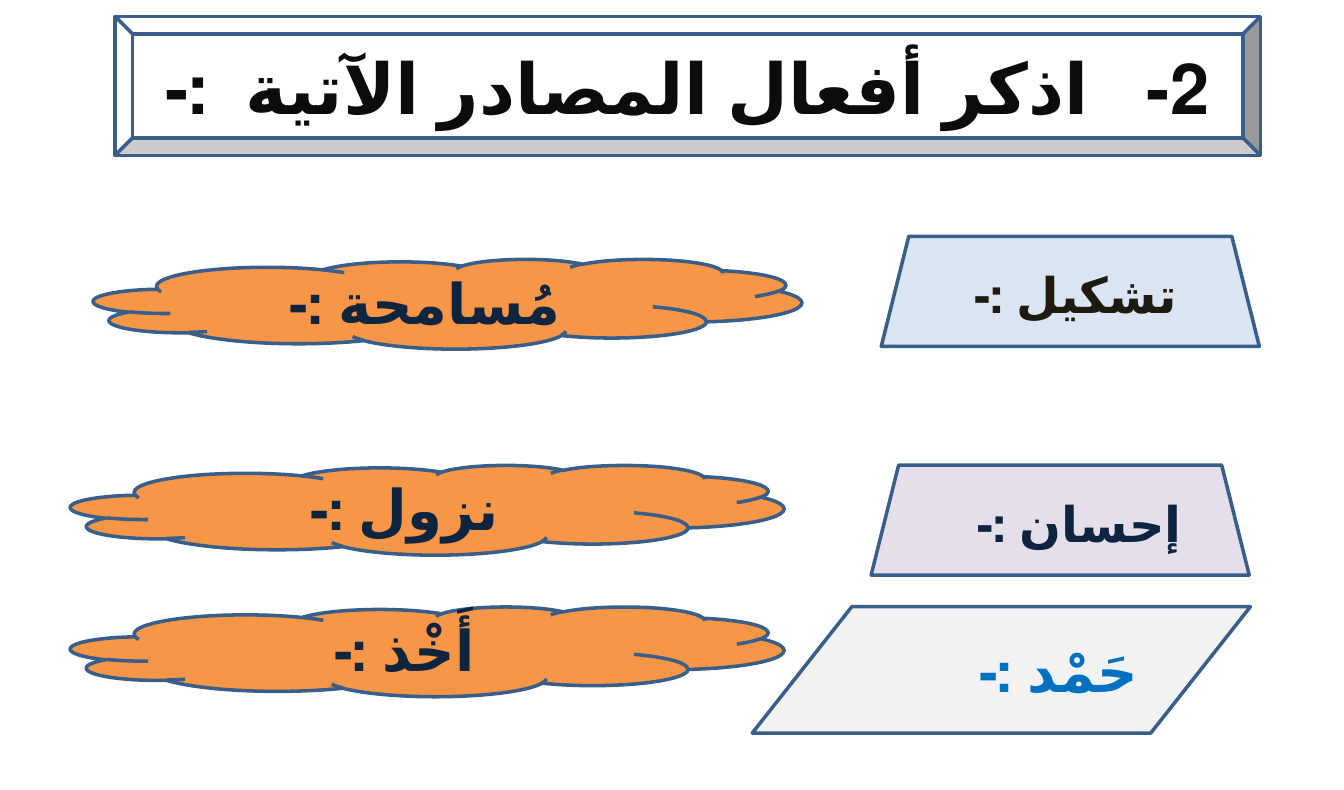
from dataclasses import dataclass

import pptx
import pptx.dml.color
import pptx.enum.lang
import pptx.enum.shapes
import pptx.enum.text
import pptx.shapes.autoshape
import pptx.slide
import pptx.util

Inches = pptx.util.Inches
FORMS = pptx.enum.shapes.MSO_SHAPE
ALIGN = pptx.enum.text.PP_ALIGN
FONT = "Calibri"
INSET = 0.1

COLORS = {
    "white": "FFFFFF",
    "edge": "395E89",
    "black": "0C0C0C",
    "brown": "1D1B10",
    "navy": "0F243E",
    "blue": "0070C0",
    "orange": "F79646",
    "sky": "DAE5F1",
    "lilac": "E5DFEC",
    "gray": "F2F2F2",
}


@dataclass
class Card:
    """A filled shape with one word; pad is extra left inset in inches."""
    text: str
    left: float
    top: float
    width: float
    height: float
    form: FORMS
    fill: str
    ink: str = "navy"
    size: int = 32
    pad: float = 0
    align: ALIGN = ALIGN.CENTER


def cloud(text: str, left: float, top: float, width: float) -> Card:
    return Card(text, left, top, width, 0.71, FORMS.CLOUD, "orange", pad=0.04)


def slant(text: str, left: float, top: float, fill: str, ink: str, pad: float) -> Card:
    return Card(text, left, top, 2.99, 0.87, FORMS.TRAPEZOID, fill, ink, 28, pad)


BANNER = Card("2-   اذكر أفعال المصادر الآتية  :-", 0.91, 0.13, 9.06, 1.1,
              FORMS.BEVEL, "white", "black", 40)
CARDS = [
    slant("تشكيل :-", 6.97, 1.87, "sky", "brown", 0.08),
    cloud("مُسامحة :-", 0.74, 2.05, 5.6),
    slant("إحسان :-", 6.89, 3.68, "lilac", "navy", 0.3),
    cloud("نزول :-", 0.56, 3.68, 5.64),
    Card("حَمْد :-", 5.95, 4.8, 3.94, 1, FORMS.FLOWCHART_DATA, "gray", "blue",
         align=ALIGN.RIGHT),
    cloud("أَخْذ :-", 0.56, 4.8, 5.64),
]


def color(name: str) -> pptx.dml.color.RGBColor:
    return pptx.dml.color.RGBColor.from_string(COLORS[name])


def write(shape: pptx.shapes.autoshape.Shape, text: str, *, size: int, ink: str,
          align: ALIGN = ALIGN.CENTER, pad: float = 0) -> None:
    """Set one bold right-to-left line of text, centred in height."""
    frame = shape.text_frame
    frame.word_wrap = True
    frame.auto_size = pptx.enum.text.MSO_AUTO_SIZE.NONE
    frame.vertical_anchor = pptx.enum.text.MSO_ANCHOR.MIDDLE
    frame.margin_left = Inches(INSET + pad)
    frame.margin_right = Inches(INSET)
    frame.margin_top = frame.margin_bottom = Inches(INSET / 2)
    line = frame.paragraphs[0]
    line.alignment = align
    line._p.get_or_add_pPr().set("rtl", "1")
    run = line.add_run()
    run.text = text
    run.font.name = FONT
    run.font.size = pptx.util.Pt(size)
    run.font.bold = True
    run.font.color.rgb = color(ink)
    run.font.language_id = pptx.enum.lang.MSO_LANGUAGE_ID.ARABIC


def draw_form(slide: pptx.slide.Slide, card: Card) -> pptx.shapes.autoshape.Shape:
    shape = slide.shapes.add_shape(card.form, Inches(card.left), Inches(card.top),
                                   Inches(card.width), Inches(card.height))
    shape.fill.solid()
    shape.fill.fore_color.rgb = color(card.fill)
    shape.line.color.rgb = color("edge")
    shape.line.width = pptx.util.Pt(2)
    shape.shadow.inherit = False
    return shape


def draw_title(slide: pptx.slide.Slide) -> None:
    """Lay the title placeholder over its bevelled frame."""
    title, frame = slide.shapes.title, draw_form(slide, BANNER)
    title.left, title.top = frame.left, frame.top
    title.width, title.height = frame.width, frame.height
    title._element.addprevious(frame._element)
    write(title, BANNER.text, size=BANNER.size, ink=BANNER.ink)


def draw_card(slide: pptx.slide.Slide, card: Card) -> None:
    write(draw_form(slide, card), card.text, size=card.size, ink=card.ink,
          align=card.align, pad=card.pad)


def main() -> None:
    deck = pptx.Presentation()
    deck.slide_width, deck.slide_height = Inches(10.63), Inches(6.25)
    slide = deck.slides.add_slide(deck.slide_layouts.get_by_name("Title Only"))
    draw_title(slide)
    for card in CARDS:
        draw_card(slide, card)
    deck.save("out.pptx")


if __name__ == "__main__":
    main()
